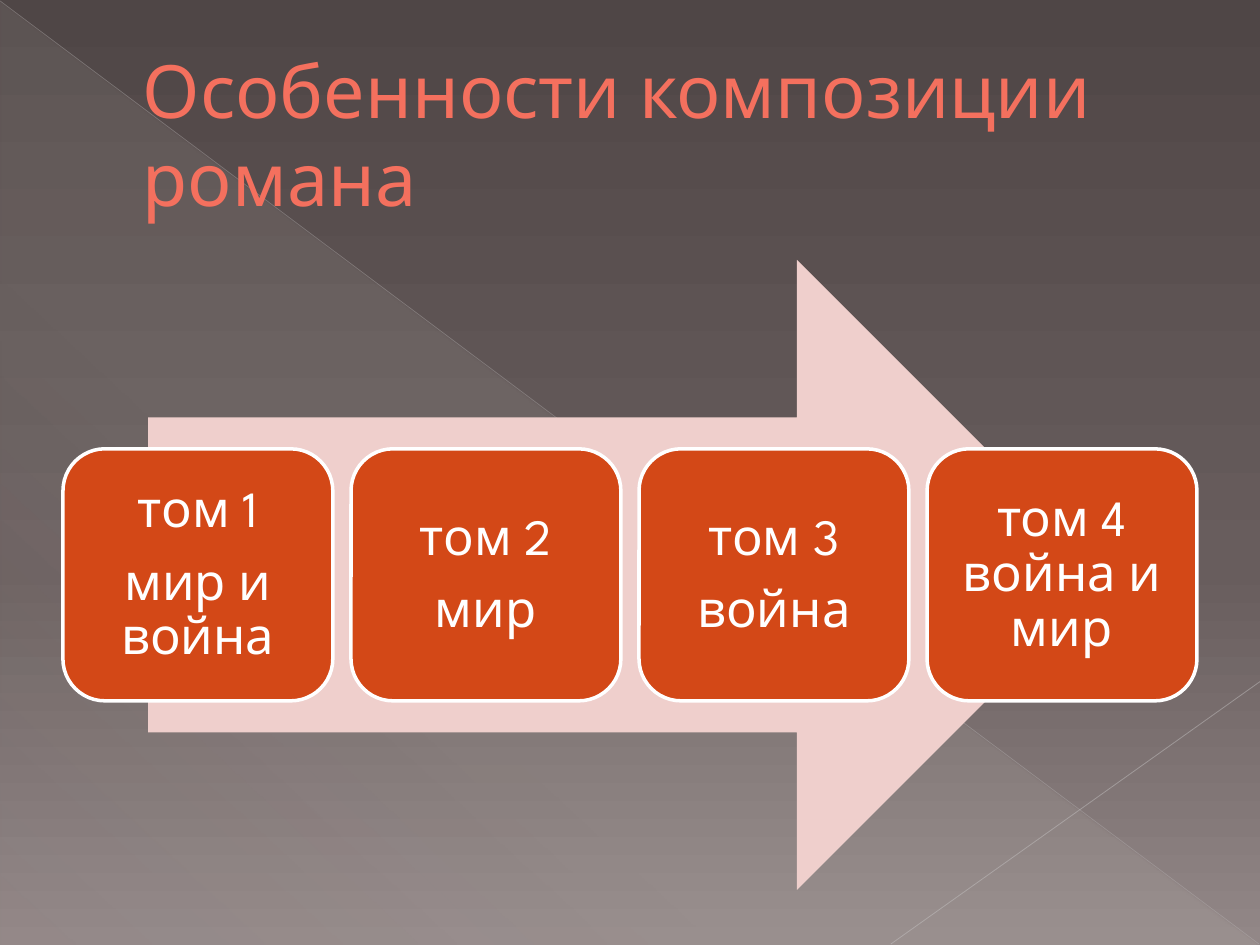
from lxml.etree import SubElement
from pptx import Presentation
from pptx.dml.color import RGBColor
from pptx.enum.shapes import MSO_CONNECTOR, MSO_SHAPE
from pptx.enum.text import MSO_ANCHOR, MSO_AUTO_SIZE, PP_ALIGN
from pptx.oxml.ns import qn
from pptx.util import Pt

CORAL = RGBColor(0xF4, 0x70, 0x5E)
RUST = RGBColor(0x92, 0x32, 0x10)
ORANGE = RGBColor(0xD3, 0x48, 0x17)
PINK = RGBColor(0xEF, 0xCF, 0xCC)
WHITE = RGBColor(0xFF, 0xFF, 0xFF)
CREAM = RGBColor(0xE9, 0xE5, 0xDC)
LONG_RAY = RGBColor(0xC1, 0xBE, 0xBE)
SHORT_RAY = RGBColor(0xC7, 0xC5, 0xC5)
DARK = RGBColor(0x4F, 0x46, 0x46)
MIDDLE = RGBColor(0x68, 0x5D, 0x5D)
LIGHT = RGBColor(0x92, 0x87, 0x87)

VOLUMES = [
    ["том 1", "мир и война"],
    ["том 2", "мир"],
    ["том 3", "война"],
    ["том 4 война и мир"],
]


def add_color(parent, color, opacity=100):
    clr = SubElement(parent, qn("a:srgbClr"), val=str(color))
    if opacity < 100:
        SubElement(clr, qn("a:alpha"), val=str(opacity * 1000))


class NovelSlide:
    font = "League Spartan"
    title_size = Pt(42)
    volume_size = Pt(29)

    def __init__(self, slide):
        self.slide = slide
        self.shapes = slide.shapes

    def gradient(self, fill, owner, stops, angle):
        """Fill with (position, colour, opacity) stops, angle clockwise."""
        fill.gradient()
        grad = owner.find(".//" + qn("a:gradFill"))
        for child in list(grad):
            grad.remove(child)
        stop_list = SubElement(grad, qn("a:gsLst"))
        for position, color, opacity in stops:
            stop = SubElement(stop_list, qn("a:gs"), pos=str(position * 1000))
            add_color(stop, color, opacity)
        SubElement(grad, qn("a:lin"), ang=str(angle * 60000), scaled="0")

    def background(self, stops, angle):
        self.gradient(self.slide.background.fill, self.slide.element, stops, angle)

    def block(self, preset, left, top, width, height, color=None):
        block = self.shapes.add_shape(preset, Pt(left), Pt(top), Pt(width), Pt(height))
        block.shadow.inherit = False
        block.line.fill.background()
        if color is not None:
            block.fill.solid()
            block.fill.fore_color.rgb = color
        return block

    def glow(self, left, top, width, height, stops, angle):
        glow = self.block(MSO_SHAPE.RIGHT_TRIANGLE, left, top, width, height)
        self.gradient(glow.fill, glow.element, stops, angle)

    def ray(self, x1, y1, x2, y2, color, width, opacity):
        ray = self.shapes.add_connector(
            MSO_CONNECTOR.STRAIGHT, Pt(x1), Pt(y1), Pt(x2), Pt(y2))
        ray.line.width = Pt(width)
        ray.line.color.rgb = color
        clr = ray.element.spPr.find(".//" + qn("a:srgbClr"))
        SubElement(clr, qn("a:alpha"), val=str(opacity * 1000))
        SubElement(ray.element.spPr, qn("a:effectLst"))

    def run(self, paragraph, text, size, color):
        run = paragraph.add_run()
        run.text = text
        run.font.name = self.font
        run.font.size = size
        run.font.color.rgb = color
        return run

    def title(self, text, left, top, width, height, indent):
        title = self.shapes.title
        title.left, title.top = Pt(left), Pt(top)
        title.width, title.height = Pt(width), Pt(height)
        # Bring the title in front of the decoration
        title.element.getparent().append(title.element)
        frame = title.text_frame
        frame.word_wrap = True
        frame.auto_size = MSO_AUTO_SIZE.NONE
        frame.vertical_anchor = MSO_ANCHOR.MIDDLE
        heading = frame.paragraphs[0]
        heading.alignment = PP_ALIGN.LEFT
        props = heading._p.get_or_add_pPr()
        props.set("marL", str(Pt(indent)))
        props.set("indent", "0")
        run = self.run(heading, text, self.title_size, CORAL)
        # Thin letter outline, which must come first in the run properties
        letters = run.font._element
        outline = SubElement(letters, qn("a:ln"), w=str(Pt(0.5)))
        add_color(SubElement(outline, qn("a:solidFill")), RUST)
        letters.insert(0, outline)

    def volume(self, lines, left, top, width, height):
        card = self.block(
            MSO_SHAPE.ROUNDED_RECTANGLE, left, top, width, height, ORANGE)
        card.line.color.rgb = WHITE
        card.line.width = Pt(2)
        frame = card.text_frame
        frame.word_wrap = True
        frame.vertical_anchor = MSO_ANCHOR.MIDDLE
        frame.margin_left = frame.margin_right = Pt(1.6)
        frame.margin_top = frame.margin_bottom = Pt(1.6)
        for index, text in enumerate(lines):
            line = frame.add_paragraph() if index else frame.paragraphs[0]
            line.alignment = PP_ALIGN.CENTER
            line.line_spacing = 0.9
            line.space_after = Pt(10)
            self.run(line, text, self.volume_size, WHITE)


def main():
    deck = Presentation()
    deck.slide_width, deck.slide_height = Pt(720), Pt(540)
    novel = NovelSlide(deck.slides.add_slide(deck.slide_layouts[5]))

    # Background and its decoration
    novel.background([(0, DARK, 100), (60, MIDDLE, 100), (100, LIGHT, 100)], 90)
    novel.glow(0.5, 1, 719, 539, [(0, CREAM, 10), (70, CREAM, 8), (100, CREAM, 1)], 133)
    novel.ray(0, 0.5, 719.5, 539.5, LONG_RAY, 0.39, 35)
    novel.ray(720, 389.5, 509, 539.5, SHORT_RAY, 0.47, 45)

    # Title
    novel.title("Особенности композиции романа", 36, 21, 648, 110, indent=38.4)

    # Arrow behind the volumes
    novel.block(MSO_SHAPE.RIGHT_ARROW, 84.6, 148.5, 550.8, 360, PINK)

    # Volumes, spread evenly between the side margins
    margin, width = 36, 154.2
    pitch = (720 - 2 * margin - width) / (len(VOLUMES) - 1)
    for index, lines in enumerate(VOLUMES):
        novel.volume(lines, margin + index * pitch, 256.5, width, 144)

    deck.save("out.pptx")


if __name__ == "__main__":
    main()
